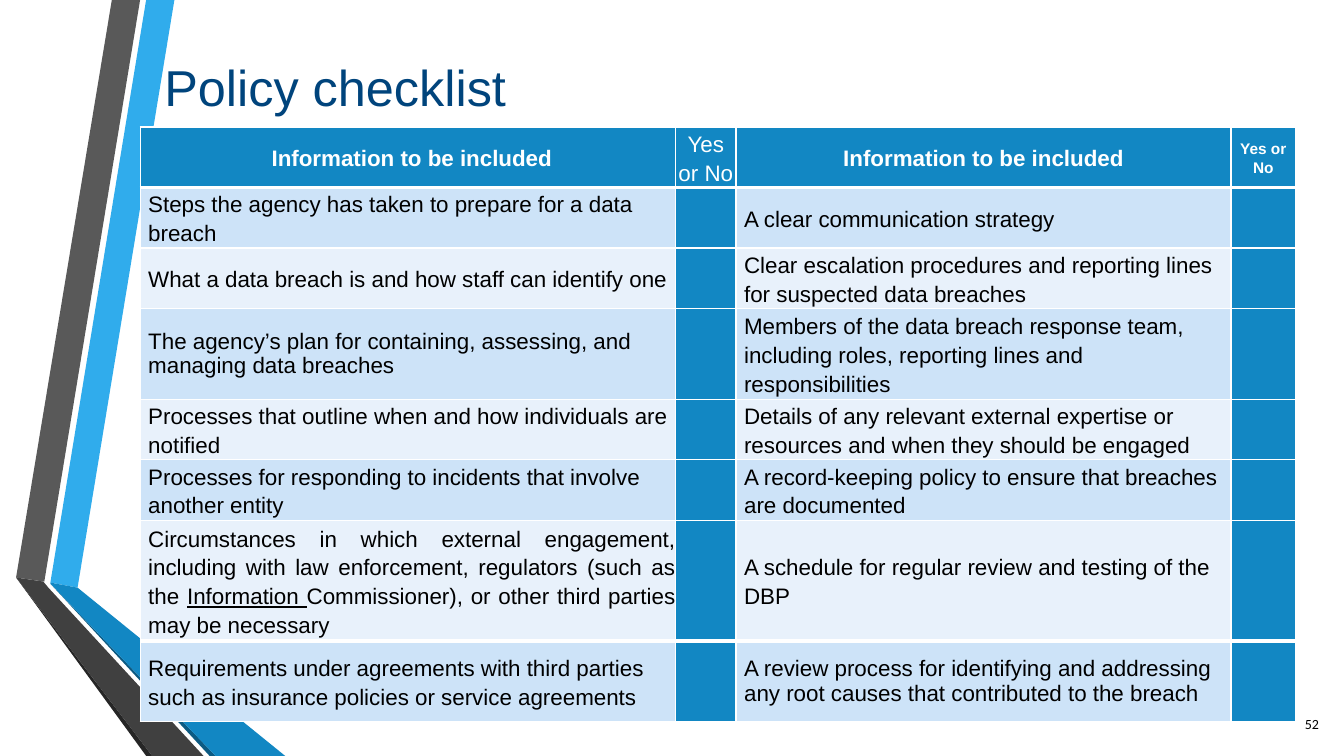
from dataclasses import dataclass

from lxml import etree
from pptx import Presentation
from pptx import util as u
from pptx.dml.color import RGBColor
from pptx.enum import text
from pptx.oxml import ns

PX = 9144  # EMU per px: 100 px to the inch
LEFT, CENTER, RIGHT, JUSTIFY = (
    text.PP_ALIGN.LEFT, text.PP_ALIGN.CENTER, text.PP_ALIGN.RIGHT, text.PP_ALIGN.JUSTIFY)


@dataclass(frozen=True)
class Theme:
    font: str = "Arial"
    number_font: str = "Calibri"
    navy: str = "00447C"
    blue: str = "1287C3"
    sky: str = "30ACEC"
    deep_blue: str = "0C5A82"
    grey: str = "595959"
    dark_grey: str = "404040"
    charcoal: str = "262626"
    band: str = "CDE3F8"
    pale_band: str = "E8F1FB"
    white: str = "FFFFFF"
    black: str = "000000"
    title_size: int = 36
    body_size: int = 16
    small_size: int = 11
    number_size: int = 10
    rule: int = 1
    thick_rule: int = 3


class Deck:
    def __init__(self, theme, width, height):
        self.theme = theme
        self.prs = Presentation()
        self.prs.slide_width, self.prs.slide_height = width * PX, height * PX
        self.slide = self.prs.slides.add_slide(self.prs.slide_layouts[5])

    def add_runs(self, paragraph, wording, size, color, align=LEFT, bold=False,
                 font=None, spacing=1.0):
        """Parts of the wording between underscores are underlined."""
        paragraph.alignment = align
        paragraph.line_spacing = spacing
        for index, part in enumerate(wording.split("_")):
            run = paragraph.add_run()
            run.text = part
            run.font.name = font or self.theme.font
            run.font.size = u.Pt(size)
            run.font.bold = bold
            run.font.underline = index % 2 == 1
            run.font.color.rgb = RGBColor.from_string(color)

    def ribbon(self, color, points):
        builder = self.slide.shapes.build_freeform(*points[0], scale=PX)
        builder.add_line_segments(points[1:], close=True)
        shape = builder.convert_to_shape()
        shape.shadow.inherit = False
        shape.fill.solid()
        shape.fill.fore_color.rgb = RGBColor.from_string(color)
        shape.line.fill.background()

    def title(self, wording, left, top, width, height):
        heading = self.slide.shapes.title
        heading.left, heading.top = left * PX, top * PX
        heading.width, heading.height = width * PX, height * PX
        frame = heading.text_frame
        frame.auto_size = text.MSO_AUTO_SIZE.NONE
        frame.vertical_anchor = text.MSO_ANCHOR.MIDDLE
        self.add_runs(frame.paragraphs[0], wording, self.theme.title_size, self.theme.navy)
        heading.element.getparent().append(heading.element)  # in front of the ribbons

    def label(self, wording, left, top, width, height):
        box = self.slide.shapes.add_textbox(left * PX, top * PX, width * PX, height * PX)
        frame = box.text_frame
        frame.word_wrap = True
        frame.vertical_anchor = text.MSO_ANCHOR.MIDDLE
        self.add_runs(frame.paragraphs[0], wording, self.theme.number_size, self.theme.black,
                      RIGHT, font=self.theme.number_font)

    def table(self, left, top, columns, rows):
        frame = self.slide.shapes.add_table(
            len(rows), len(columns), left * PX, top * PX, sum(columns) * PX, sum(rows) * PX)
        grid = frame.table
        grid.horz_banding = False
        for column, width in zip(grid.columns, columns):
            column.width = width * PX
        for row, height in zip(grid.rows, rows):
            row.height = height * PX
        return grid

    def cell(self, cell, fill, top_rule, bottom_rule):
        cell.fill.solid()
        cell.fill.fore_color.rgb = RGBColor.from_string(fill)
        rules = {"lnL": self.theme.rule, "lnR": self.theme.rule,
                 "lnT": top_rule, "lnB": bottom_rule}
        properties = cell._tc.get_or_add_tcPr()
        for position, (side, points) in enumerate(rules.items()):
            edge = etree.Element(ns.qn(f"a:{side}"), w=str(u.Pt(points)))
            paint = etree.SubElement(edge, ns.qn("a:solidFill"))
            etree.SubElement(paint, ns.qn("a:srgbClr"), val=self.theme.white)
            properties.insert(position, edge)

    def cell_text(self, cell, wording, indent, **style):
        cell.margin_left = indent * PX
        cell.margin_right = cell.margin_top = cell.margin_bottom = 0
        cell.vertical_anchor = text.MSO_ANCHOR.MIDDLE
        self.add_runs(cell.text_frame.paragraphs[0], wording, **style)


# Checklist content: left item, right item
HEADINGS = ["Information to be included", "Yes or No"] * 2
CHECKLIST = [
    ("Steps the agency has taken to prepare for a data breach",
     "A clear communication strategy"),
    ("What a data breach is and how staff can identify one",
     "Clear escalation procedures and reporting lines for suspected data breaches"),
    ("The agency’s plan for containing, assessing, and managing data breaches",
     "Members of the data breach response team, including roles, reporting lines and "
     "responsibilities"),
    ("Processes that outline when and how individuals are notified",
     "Details of any relevant external expertise or resources and when they should be engaged"),
    ("Processes for responding to incidents that involve another entity",
     "A record-keeping policy to ensure that breaches are documented"),
    ("Circumstances in which external engagement, including with law enforcement, regulators "
     "(such as the _Information _Commissioner), or other third parties may be necessary",
     "A schedule for regular review and testing of the DBP"),
    ("Requirements under agreements with third parties such as insurance policies or service "
     "agreements",
     "A review process for identifying and addressing any root causes that contributed to "
     "the breach"),
]
COLUMNS = [531, 60, 491, 64]
ROWS = [60, 60, 60, 90, 60, 60, 120, 80]
INDENT = 8
LOOSE = 1.15
SINGLE_SPACED = {(3, 0), (7, 2)}
JUSTIFIED = {(6, 0)}


def main():
    theme = Theme()
    deck = Deck(theme, 1333, 750)

    # Folded ribbons at the left edge
    deck.ribbon(theme.sky, [(50, 578), (77, 583), (173, 0), (145, 0)])
    deck.ribbon(theme.grey, [(139, 0), (111, 0), (16, 573), (44, 577)])
    deck.ribbon(theme.charcoal, [(16, 573), (145, 750), (151, 750)])
    deck.ribbon(theme.deep_blue, [(50, 579), (208, 750), (214, 750)])
    deck.ribbon(theme.blue, [(50, 579), (214, 750), (283, 750), (77, 583), (50, 578)])
    deck.ribbon(theme.dark_grey, [(202, 750), (48, 583), (43, 577), (16, 573), (151, 750)])

    deck.title("Policy checklist", 153, 45, 579, 81)

    # Checklist fills and rules: thick under the header and above the last row
    checklist = deck.table(139, 126, COLUMNS, ROWS)
    last = len(ROWS) - 1
    for r in range(len(ROWS)):
        band = theme.band if r % 2 else theme.pale_band
        top = theme.thick_rule if r in (1, last) else theme.rule
        bottom = theme.thick_rule if r in (0, last - 1) else theme.rule
        for c in range(len(COLUMNS)):
            solid_blue = r == 0 or c % 2 == 1
            deck.cell(checklist.cell(r, c), theme.blue if solid_blue else band, top, bottom)

    # Header wording
    for c, heading in enumerate(HEADINGS):
        deck.cell_text(checklist.cell(0, c), heading, INDENT if c == 0 else 0,
                       size=theme.small_size if c == 3 else theme.body_size,
                       color=theme.white, align=CENTER, bold=c != 1, spacing=LOOSE)

    # Checklist items; the answer columns stay empty
    for r, items in enumerate(CHECKLIST, start=1):
        for c, item in zip((0, 2), items):
            deck.cell_text(checklist.cell(r, c), item, INDENT,
                           size=theme.body_size, color=theme.black,
                           align=JUSTIFY if (r, c) in JUSTIFIED else LEFT,
                           spacing=1.0 if (r, c) in SINGLE_SPACED else LOOSE)

    # Slide number
    deck.label("52", 1258, 698, 60, 40)
    deck.prs.save("out.pptx")


if __name__ == "__main__":
    main()
